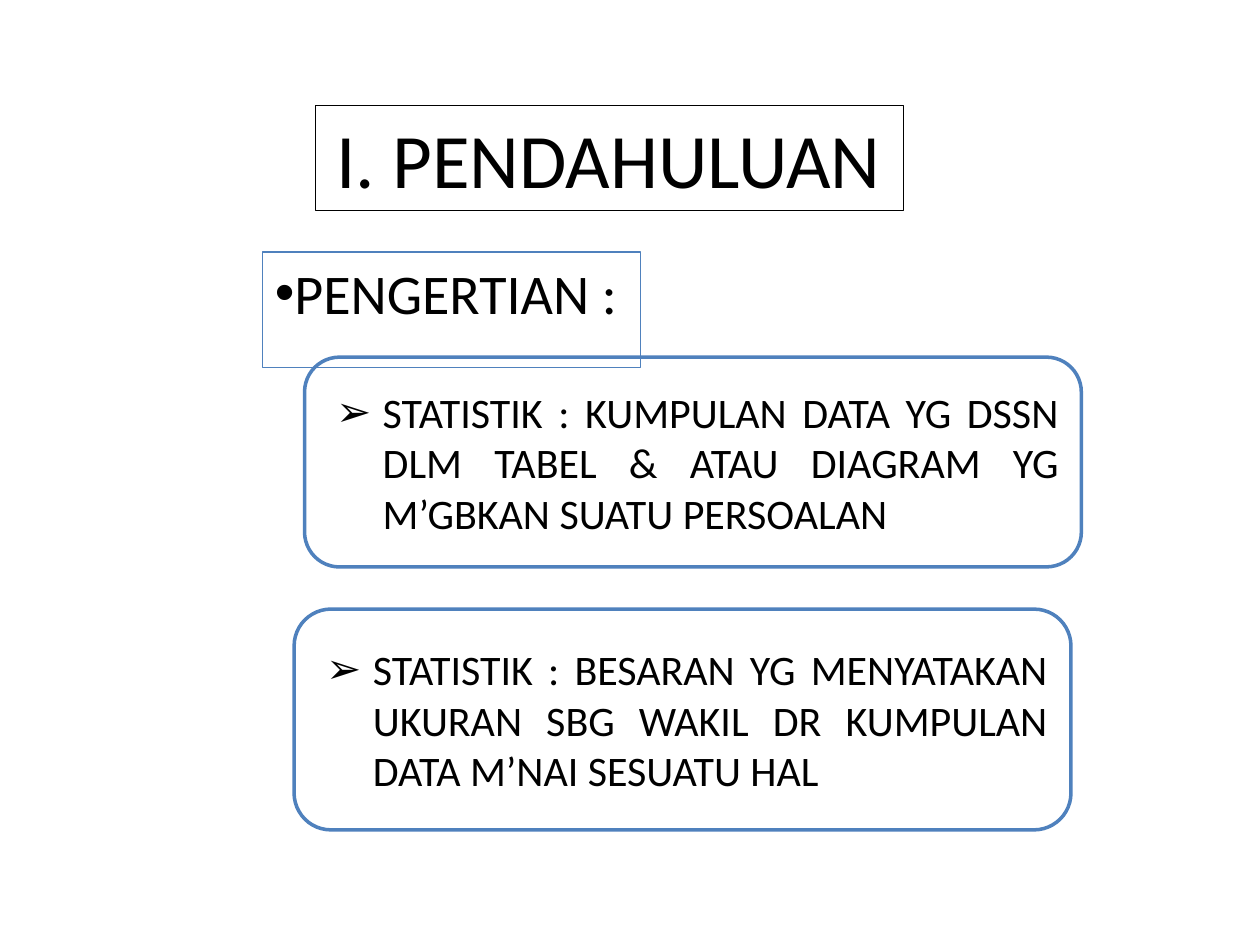
from dataclasses import dataclass

from lxml import etree
from pptx import Presentation
from pptx.dml.color import RGBColor
from pptx.enum.shapes import MSO_SHAPE
from pptx.enum.text import MSO_ANCHOR, PP_ALIGN
from pptx.oxml.ns import qn
from pptx.util import Cm, Pt

RECTANGLE = MSO_SHAPE.RECTANGLE
ROUNDED = MSO_SHAPE.ROUNDED_RECTANGLE
TOP, MIDDLE = MSO_ANCHOR.TOP, MSO_ANCHOR.MIDDLE
LEFT, CENTER, JUSTIFY = PP_ALIGN.LEFT, PP_ALIGN.CENTER, PP_ALIGN.JUSTIFY


@dataclass(frozen=True)
class Theme:
    font: str = "Calibri"
    ink: RGBColor = RGBColor(0, 0, 0)
    accent: RGBColor = RGBColor(0x4F, 0x81, 0xBD)
    title_size: int = 44
    heading_size: int = 32
    body_size: int = 24


theme = Theme()


def add_outlined_text(page, kind, place, line, text, size, align, anchor):
    """Add an unfilled outlined shape with one run; return its paragraph."""
    box = page.shapes.add_shape(kind, *[Cm(length) for length in place])
    box.shadow.inherit = False
    box.fill.background()
    box.line.color.rgb, box.line.width = line
    frame = box.text_frame
    frame.word_wrap = True
    frame.vertical_anchor = anchor
    para = frame.paragraphs[0]
    para.alignment = align
    span = para.add_run()
    span.text = text
    span.font.name = theme.font
    span.font.size = Pt(size)
    span.font.color.rgb = theme.ink
    return para


def add_bullet(para, mark, margin=0, indent=0):
    properties = para._p.get_or_add_pPr()
    properties.set("marL", str(Cm(margin)))
    properties.set("indent", str(Cm(indent)))
    etree.SubElement(properties, qn("a:buFont")).set("typeface", "Arial")
    etree.SubElement(properties, qn("a:buChar")).set("char", mark)


deck = Presentation()
deck.slide_width, deck.slide_height = Cm(25.4), Cm(19.05)
page = deck.slides.add_slide(deck.slide_layouts[6])

add_outlined_text(page, RECTANGLE, (6.35, 2.12, 11.85, 2.12), (theme.ink, Pt(0.25)),
                  "I. PENDAHULUAN", theme.title_size, CENTER, MIDDLE)

heading = add_outlined_text(page, RECTANGLE, (5.29, 5.08, 7.62, 2.33),
                            (theme.accent, Pt(0.75)), "PENGERTIAN :",
                            theme.heading_size, LEFT, TOP)
add_bullet(heading, "•")

definitions = [
    ((6.14, 7.2, 15.66, 4.23),
     "STATISTIK : KUMPULAN DATA YG DSSN DLM TABEL & ATAU DIAGRAM YG "
     "M’GBKAN SUATU PERSOALAN"),
    ((5.93, 12.28, 15.66, 4.45),
     "STATISTIK : BESARAN YG MENYATAKAN UKURAN SBG WAKIL DR KUMPULAN "
     "DATA M’NAI SESUATU HAL"),
]
for place, text in definitions:
    definition = add_outlined_text(page, ROUNDED, place, (theme.accent, Pt(2)),
                                   text, theme.body_size, JUSTIFY, MIDDLE)
    add_bullet(definition, "➢", margin=1.12, indent=-0.94)

deck.save("out.pptx")
